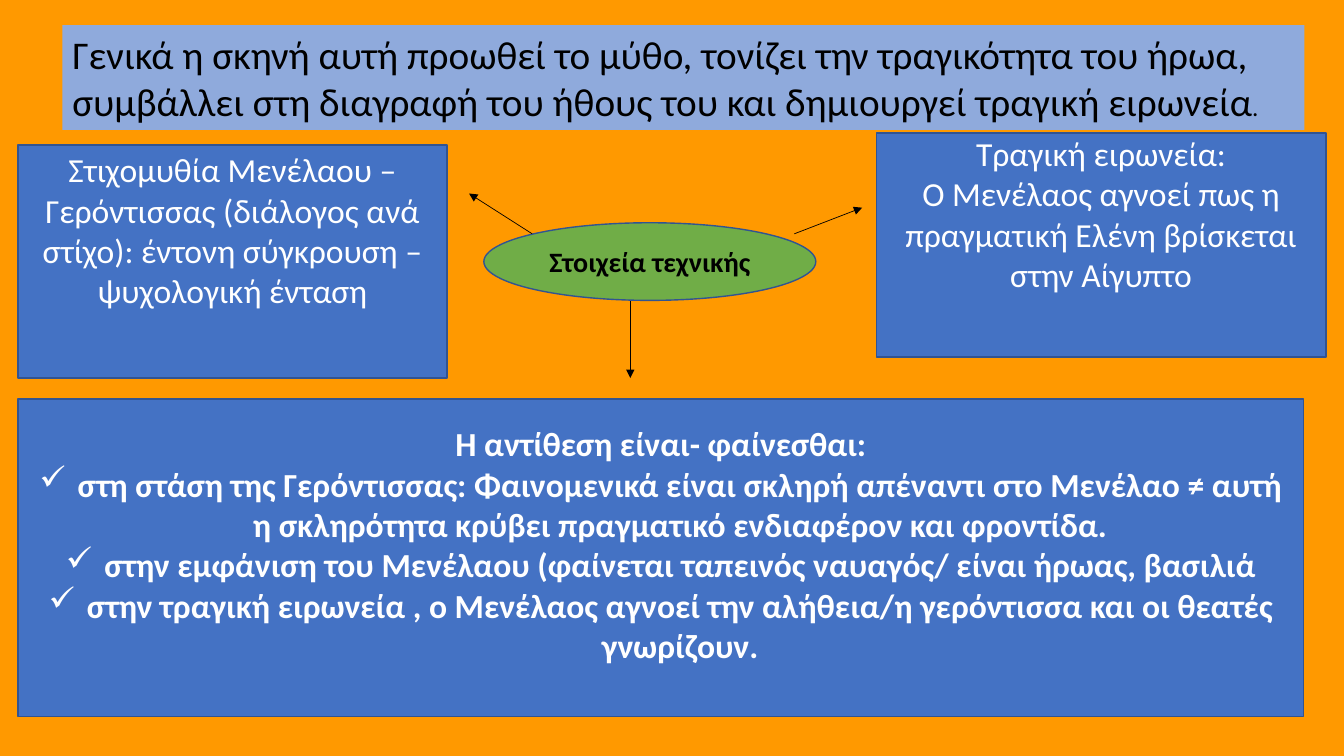
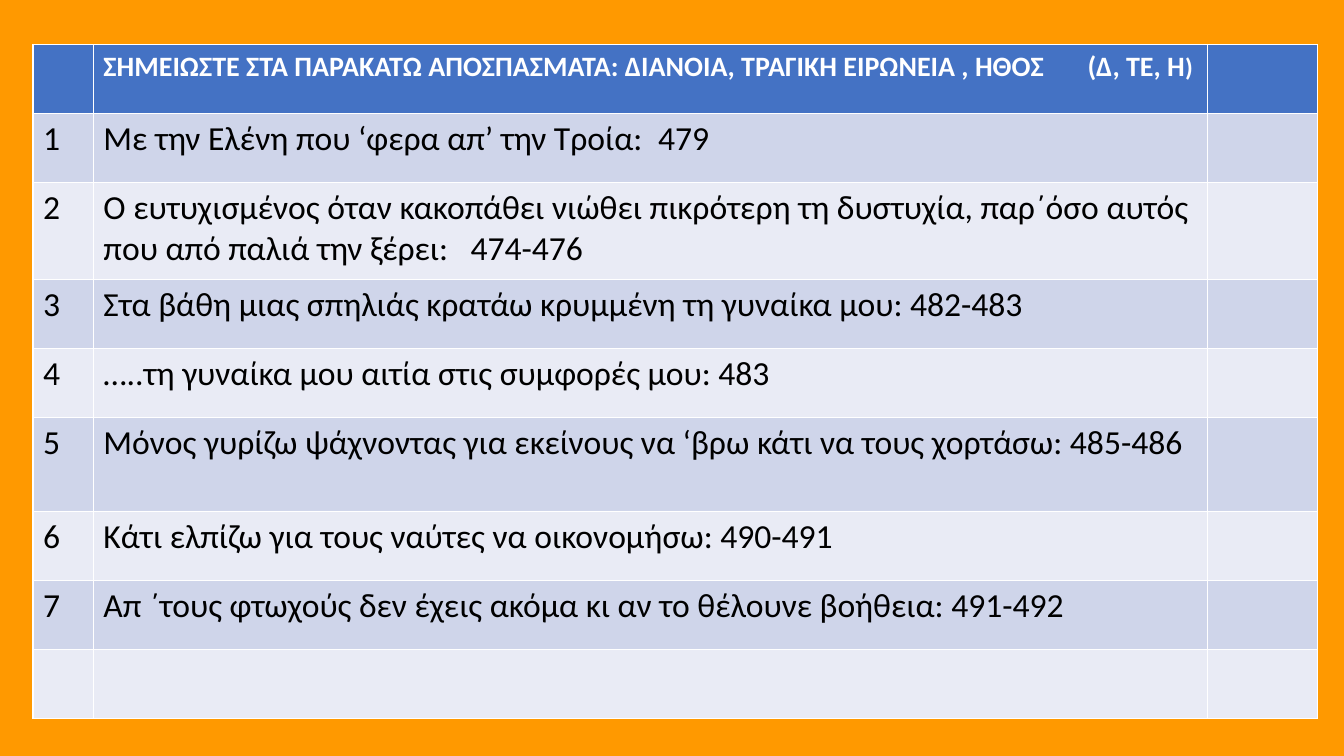
from dataclasses import dataclass

from lxml.etree import SubElement
from pptx import Presentation
from pptx.dml.color import RGBColor
from pptx.enum.shapes import MSO_CONNECTOR, MSO_SHAPE
from pptx.enum.text import MSO_ANCHOR, PP_ALIGN
from pptx.oxml.ns import qn
from pptx.util import Inches, Pt


@dataclass(frozen=True)
class Theme:
    font: str = "Calibri"
    orange: RGBColor = RGBColor(0xFF, 0x99, 0x00)
    pale_blue: RGBColor = RGBColor(0x8F, 0xAA, 0xDC)
    blue: RGBColor = RGBColor(0x44, 0x72, 0xC4)
    outline: RGBColor = RGBColor(0x32, 0x54, 0x91)
    green: RGBColor = RGBColor(0x70, 0xAD, 0x47)
    odd_row: RGBColor = RGBColor(0xCF, 0xD5, 0xEA)
    even_row: RGBColor = RGBColor(0xE9, 0xEB, 0xF5)
    black: RGBColor = RGBColor(0, 0, 0)
    white: RGBColor = RGBColor(0xFF, 0xFF, 0xFF)
    headline: Pt = Pt(28)
    body: Pt = Pt(24)
    label: Pt = Pt(20)
    small: Pt = Pt(18)


theme = Theme()
deck = Presentation()
deck.slide_width, deck.slide_height = Inches(13.33), Inches(7.5)
deck.slide_master.background.fill.solid()
deck.slide_master.background.fill.fore_color.rgb = theme.orange
blank = deck.slide_layouts[6]

# Grid of one hundred columns and one hundred rows
column, row = deck.slide_width / 100, deck.slide_height / 100


def style(para, size, color, bold=False):
    para.font.name, para.font.size, para.font.bold = theme.font, size, bold
    para.font.color.rgb = color


def add_box(page, kind, place, fill, outline=None):
    left, top, width, height = place
    box = page.shapes.add_shape(kind, int(left * column), int(top * row),
                                int(width * column), int(height * row))
    box.shadow.inherit = False
    box.fill.solid()
    box.fill.fore_color.rgb = fill
    if outline is None:
        box.line.fill.background()
    else:
        box.line.color.rgb, box.line.width = outline, Pt(1)
    box.text_frame.word_wrap = True
    return box


# Slide 1: techniques of the scene
page = deck.slides.add_slide(blank)

# Headline band
band = add_box(page, MSO_SHAPE.RECTANGLE, (4.65, 3.33, 92.4, 13.87), theme.pale_blue)
band.text_frame.vertical_anchor = MSO_ANCHOR.TOP
para = band.text_frame.paragraphs[0]
para.alignment = PP_ALIGN.LEFT
style(para, theme.headline, theme.black)
para.add_run().text = (
    "Γενικά η σκηνή αυτή προωθεί το μύθο, τονίζει την τραγικότητα του ήρωα, "
    "συμβάλλει στη διαγραφή του ήθους του και δημιουργεί τραγική ειρωνεία")
full_stop = para.add_run()
full_stop.text, full_stop.font.size = ".", theme.small

# Blue boxes: place, top margin, bold, plain lines, ticked lines
blue_boxes = [
    ((1.35, 19.2, 31.9, 30.8), 0.04, False,
     ["Στιχομυθία Μενέλαου – Γερόντισσας (διάλογος ανά στίχο): "
      "έντονη σύγκρουση – ψυχολογική ένταση"], []),
    ((65.2, 17.6, 33.45, 29.6), 0, False,
     ["Τραγική ειρωνεία:",
      "Ο Μενέλαος αγνοεί πως η πραγματική Ελένη βρίσκεται στην Αίγυπτο"], []),
    ((1.35, 52.8, 95.65, 42), 0.24, True,
     ["Η αντίθεση είναι- φαίνεσθαι:"],
     ["στη στάση της Γερόντισσας: Φαινομενικά είναι σκληρή απέναντι στο Μενέλαο "
      "≠ αυτή η σκληρότητα κρύβει πραγματικό ενδιαφέρον και φροντίδα.",
      "στην εμφάνιση του Μενέλαου (φαίνεται ταπεινός ναυαγός/ είναι ήρωας, βασιλιά",
      "στην τραγική ειρωνεία , ο Μενέλαος αγνοεί την αλήθεια/η γερόντισσα "
      "και οι θεατές γνωρίζουν."]),
]
for place, margin, bold, lines, ticked in blue_boxes:
    box = add_box(page, MSO_SHAPE.RECTANGLE, place, theme.blue, theme.outline)
    frame = box.text_frame
    frame.vertical_anchor, frame.margin_top = MSO_ANCHOR.TOP, Inches(margin)
    for index, line in enumerate(lines + ticked):
        para = frame.add_paragraph() if index else frame.paragraphs[0]
        para.text, para.alignment = line, PP_ALIGN.CENTER
        if line in ticked:
            properties = para._p.get_or_add_pPr()
            properties.set("marL", str(Inches(0.38)))
            properties.set("indent", str(Inches(-0.38)))
            SubElement(properties, qn("a:buChar"), char="✓")
        style(para, theme.body, theme.white, bold)

# Central ellipse
center = add_box(page, MSO_SHAPE.OVAL, (36, 29.47, 24.7, 10.27), theme.green, theme.outline)
center.text_frame.vertical_anchor = MSO_ANCHOR.MIDDLE
para = center.text_frame.paragraphs[0]
para.text, para.alignment = "Στοιχεία τεχνικής", PP_ALIGN.CENTER
style(para, theme.label, theme.black, True)

# Arrows from the ellipse towards the boxes
for start_x, start_y, end_x, end_y in [(39.6, 30.93, 34.9, 25.6),
                                       (59.1, 30.93, 64.15, 27.47),
                                       (46.9, 39.87, 46.9, 50)]:
    arrow = page.shapes.add_connector(
        MSO_CONNECTOR.STRAIGHT, int(start_x * column), int(start_y * row),
        int(end_x * column), int(end_y * row))
    arrow.line.color.rgb, arrow.line.width = theme.black, Pt(0.5)
    SubElement(arrow.line._get_or_add_ln(), qn("a:tailEnd"), type="triangle")
    SubElement(arrow._element.spPr, qn("a:effectLst"))

# Slide 2: exercise table
page = deck.slides.add_slide(blank)

# Excerpts with the tab stop, in inches, of the part set apart
excerpts = [
    ("Με την Ελένη που ‘φερα απ’ την Τροία:\t479", 5.5),
    ("Ο ευτυχισμένος όταν κακοπάθει νιώθει πικρότερη τη δυστυχία, παρ΄όσο αυτός "
     "που από παλιά την ξέρει:\t474-476", 3.64),
    ("Στα βάθη μιας σπηλιάς κρατάω κρυμμένη τη γυναίκα μου: 482-483", None),
    ("…..τη γυναίκα μου αιτία στις συμφορές μου: 483", None),
    ("Μόνος γυρίζω ψάχνοντας για εκείνους να ‘βρω κάτι να τους χορτάσω: 485-486", None),
    ("Κάτι ελπίζω για τους ναύτες να οικονομήσω: 490-491", None),
    ("Απ ΄τους φτωχούς δεν έχεις ακόμα κι αν το θέλουνε βοήθεια: 491-492", None),
]
heading = ("ΣΗΜΕΙΩΣΤΕ ΣΤΑ ΠΑΡΑΚΑΤΩ ΑΠΟΣΠΑΣΜΑΤΑ: ΔΙΑΝΟΙΑ, ΤΡΑΓΙΚΗ ΕΙΡΩΝΕΙΑ , ΗΘΟΣ"
           "\t(Δ, ΤΕ, Η", 9.76)
rows = [("", *heading)]
rows += [(str(number), *excerpt) for number, excerpt in enumerate(excerpts, 1)]
rows += [("", "", None)]

widths = [4.5, 82.9, 8.2]
heights = [9.13] * len(rows)
heights[2], heights[5] = 12.8, 12.5
table = page.shapes.add_table(
    len(rows), len(widths), int(2.45 * column), int(5.87 * row),
    int(sum(widths) * column), int(sum(heights) * row)).table
for index, width in enumerate(widths):
    table.columns[index].width = int(width * column)

for index, (number, text, tab) in enumerate(rows):
    table.rows[index].height = int(heights[index] * row)
    is_heading = index == 0
    fill = theme.blue if is_heading else theme.odd_row if index % 2 else theme.even_row
    for cell, content in zip(table.rows[index].cells, (number, text, "")):
        cell.fill.solid()
        cell.fill.fore_color.rgb = fill
        if not content:
            continue
        para = cell.text_frame.paragraphs[0]
        para.text = content
        if "\t" in content:
            tabs = SubElement(para._p.get_or_add_pPr(), qn("a:tabLst"))
            SubElement(tabs, qn("a:tab"), pos=str(Inches(tab)), algn="l")
        if is_heading:
            style(para, theme.label, theme.white, True)
            bracket = para.add_run()
            bracket.text, bracket.font.size = ")", theme.small
        else:
            style(para, theme.body, theme.black)

deck.save("out.pptx")
